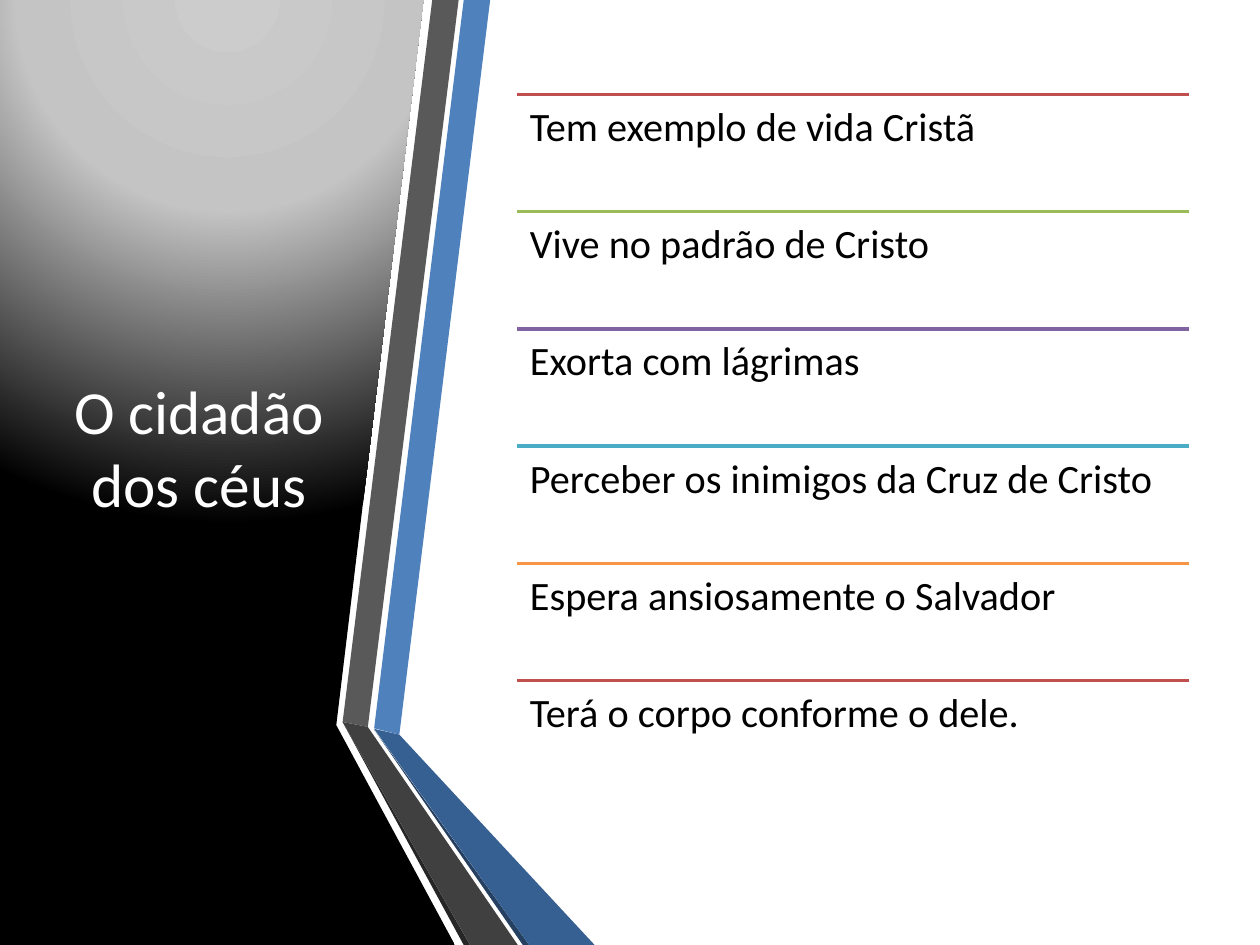
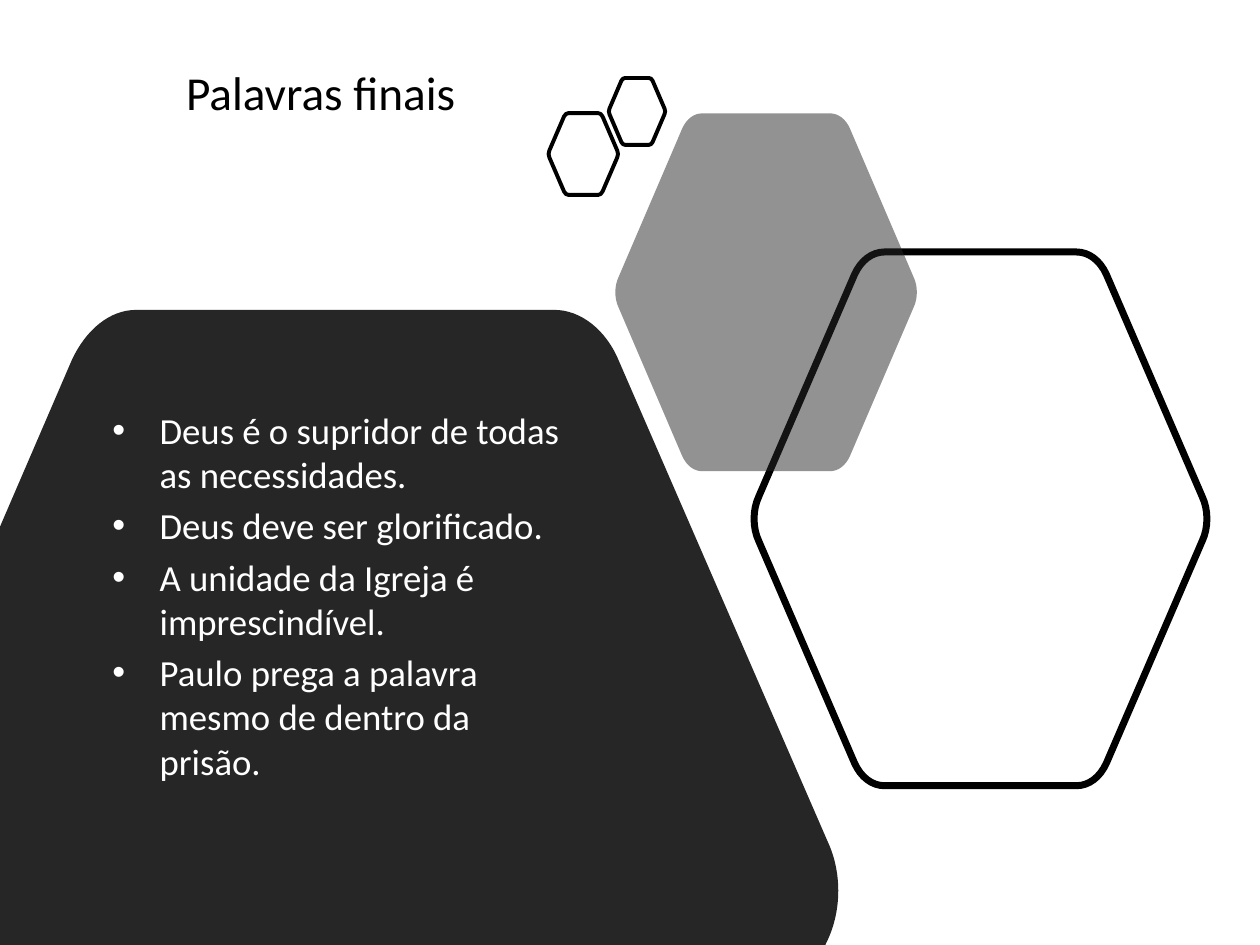
"""Builds two slides about the citizen of heaven and the closing words."""
from lxml.etree import SubElement
from pptx import Presentation
from pptx.dml.color import RGBColor
from pptx.enum.shapes import MSO_CONNECTOR
from pptx.enum.text import MSO_ANCHOR, MSO_AUTO_SIZE, PP_ALIGN
from pptx.oxml import parse_xml
from pptx.oxml.ns import nsdecls, qn
from pptx.util import Pt

FONT = "Calibri"
WIDTH, HEIGHT = 720, 540
COLORS = {
    "black": "000000", "white": "FFFFFF", "charcoal": "262626",
    "light": "CCCCCC", "silver": "C4C4C4",
    "gray": "595959", "gray_fold": "404040",
    "blue": "4F81BD", "blue_fold": "376092", "blue_edge": "254061",
    "red": "C0504D", "green": "9BBB59", "purple": "8064A2",
    "aqua": "4BACC6", "orange": "F79646",
}
RIBBONS = [
    ("blue", [(213.8, 416.2), (228.2, 419.8), (280.1, 0), (265, 0)]),
    ("gray", [(262.1, 0), (247, 0), (195.8, 412.6), (210.2, 415.4)]),
    ("charcoal", [(195.8, 412.6), (265, HEIGHT), (268.6, HEIGHT)]),
    ("blue_edge", [(213.8, 416.9), (298.8, HEIGHT), (302.4, HEIGHT)]),
    ("blue_fold", [(213.8, 416.5), (302.4, HEIGHT), (339.8, HEIGHT), (228.2, 419.8)]),
    ("gray_fold", [(295.9, HEIGHT), (210.2, 415.4), (195.8, 412.6), (268.6, HEIGHT)]),
]
TRAITS = [
    ("red", "Tem exemplo de vida Cristã"),
    ("green", "Vive no padrão de Cristo"),
    ("purple", "Exorta com lágrimas"),
    ("aqua", "Perceber os inimigos da Cruz de Cristo"),
    ("orange", "Espera ansiosamente o Salvador"),
    ("red", "Terá o corpo conforme o dele."),
]
CLOSING_WORDS = [
    "Deus é o supridor de todas as necessidades.",
    "Deus deve ser glorificado.",
    "A unidade da Igreja é imprescindível.",
    "Paulo prega a palavra mesmo de dentro da prisão.",
]
CLOSING_PANEL = [
    [(77.8, 177.1)],
    [(316.8, 177.1)],
    [(331.9, 177.1), (346.3, 188.6), (353.5, 205.9)],
    [(473, 481)],
    [(481, 498.2), (481, 519.8), (473, 537.1)],
    [(471.6, HEIGHT)],
    [(0, HEIGHT)],
    [(0, 301)],
    [(41, 205.9)],
    [(49, 188.6), (62.6, 177.1), (77.8, 177.1)],
]
HALF_HEXAGON = [
    [(0.224, 0.042)],
    [(0.238, 0.016), (0.262, 0), (0.29, 0)],
    [(0.71, 0)],
    [(0.738, 0), (0.762, 0.016), (0.776, 0.042)],
    [(0.986, 0.458)],
    [(1, 0.483), (1, 0.517), (0.986, 0.542)],
]


def rgb(color):
    return RGBColor.from_string(COLORS[color])


def write(holder, lines, size, color="black", align=PP_ALIGN.LEFT,
          anchor=MSO_ANCHOR.TOP, spacing=1.0, gap=0, inset=3.6, bullet_indent=0):
    frame = holder.text_frame
    frame.word_wrap = True
    frame.auto_size = MSO_AUTO_SIZE.NONE
    frame.vertical_anchor = anchor
    frame.margin_left = frame.margin_right = Pt(7.2)
    frame.margin_top = frame.margin_bottom = Pt(inset)
    for index, line in enumerate(lines):
        paragraph = frame.add_paragraph() if index else frame.paragraphs[0]
        if bullet_indent:
            properties = paragraph._p.get_or_add_pPr()
            properties.set("marL", str(Pt(bullet_indent)))
            properties.set("indent", str(-Pt(bullet_indent)))
            SubElement(properties, qn("a:buChar")).set("char", "•")
        paragraph.alignment = align
        paragraph.line_spacing = spacing
        paragraph.space_before = Pt(gap if index else 0)
        run = paragraph.add_run()
        run.text = line
        run.font.name = FONT
        run.font.size = Pt(size)
        run.font.color.rgb = rgb(color)


def place(placeholder, left, top, width, height):
    placeholder.left, placeholder.top = Pt(left), Pt(top)
    placeholder.width, placeholder.height = Pt(width), Pt(height)
    placeholder.element.getparent().append(placeholder.element)
    return placeholder


def bend(outline, steps):
    lines = iter(list(outline.element.spPr.iter(qn("a:lnTo"))))
    for step in steps[1:]:
        first, *others = [next(lines) for _ in step]
        if others:
            first.tag = qn("a:cubicBezTo")
            for other in others:
                first.append(other[0])
                other.getparent().remove(other)


def draw_outline(slide, steps, fill=None, line=None, weight=1.0, opacity=100):
    start, *rest = [(Pt(x), Pt(y)) for step in steps for x, y in step]
    builder = slide.shapes.build_freeform(*start)
    builder.add_line_segments(rest, close=True)
    outline = builder.convert_to_shape()
    bend(outline, steps)
    outline.shadow.inherit = False
    if fill:
        outline.fill.solid()
        outline.fill.fore_color.rgb = rgb(fill)
        if opacity < 100:
            tint = outline.element.spPr.find(".//" + qn("a:srgbClr"))
            SubElement(tint, qn("a:alpha")).set("val", str(opacity * 1000))
    else:
        outline.fill.background()
    if line:
        outline.line.color.rgb = rgb(line)
        outline.line.width = Pt(weight)
    else:
        outline.line.fill.background()
    return outline


def draw_polygon(slide, points, fill):
    return draw_outline(slide, [[point] for point in points], fill)


def draw_hexagon(slide, left, top, width, height, **style):
    opposite = [[(1 - x, 1 - y) for x, y in step] for step in HALF_HEXAGON]
    steps = [[(left + x * width, top + y * height) for x, y in step]
             for step in HALF_HEXAGON + opposite]
    draw_outline(slide, steps, **style)


def apply_glow(outline, stops):
    stop_xml = "".join(
        f'<a:gs pos="{position * 1000}"><a:srgbClr val="{COLORS[color]}"/></a:gs>'
        for position, color in stops)
    gradient = parse_xml(
        f'<a:gradFill {nsdecls("a")} rotWithShape="1"><a:gsLst>{stop_xml}</a:gsLst>'
        '<a:path path="circle"><a:fillToRect l="50000" t="-80000" r="50000" b="180000"/>'
        '</a:path></a:gradFill>')
    properties = outline.element.spPr
    properties.replace(properties.find(qn("a:solidFill")), gradient)


def draw_rule(slide, left, top, width, color):
    rule = slide.shapes.add_connector(
        MSO_CONNECTOR.STRAIGHT, Pt(left), Pt(top), Pt(left + width), Pt(top))
    rule.line.color.rgb = rgb(color)
    rule.line.width = Pt(2)
    SubElement(rule.element.spPr, qn("a:effectLst"))


def build_citizen(deck):
    slide = deck.slides.add_slide(deck.slide_layouts[5])
    panel = draw_polygon(
        slide, [(0, 0), (242, 0), (192.2, 414.4), (260, HEIGHT), (0, HEIGHT)], "black")
    apply_glow(panel, [(0, "light"), (40, "silver"), (100, "black")])
    for color, points in RIBBONS:
        draw_polygon(slide, points, color)
    title = place(slide.shapes.title, 31.6, 54.3, 164.2, 401.8)
    write(title, ["O cidadão dos céus"], 35, color="white",
          align=PP_ALIGN.CENTER, anchor=MSO_ANCHOR.MIDDLE)
    left, width, pitch = 295.7, 383.5, 66.98
    for row, (color, trait) in enumerate(TRAITS):
        top = 54 + row * pitch
        draw_rule(slide, left, top, width, color)
        label = slide.shapes.add_textbox(Pt(left), Pt(top), Pt(width), Pt(pitch))
        write(label, [trait], 23, spacing=0.9, inset=7)


def build_closing(deck):
    slide = deck.slides.add_slide(deck.slide_layouts[1])
    draw_outline(slide, CLOSING_PANEL, "charcoal")
    draw_hexagon(slide, 430, 144, 260.6, 305, line="black", weight=4)
    draw_hexagon(slide, 351, 64.8, 173.5, 204.5, fill="charcoal", opacity=50)
    for cell in [(313.4, 64.6, 39.9, 46.8), (347.8, 44.6, 32.4, 38.2)]:
        draw_hexagon(slide, *cell, line="black", weight=2.25)
    title = place(slide.shapes.title, 56.9, 36.4, 252.7, 129.6)
    write(title, ["Palavras finais"], 27, align=PP_ALIGN.CENTER, spacing=0.9)
    body = place(slide.placeholders[1], 57, 229.3, 280, 243.4)
    write(body, CLOSING_WORDS, 21, color="white", gap=4.2, bullet_indent=27)


def main():
    deck = Presentation()
    deck.slide_width, deck.slide_height = Pt(WIDTH), Pt(HEIGHT)
    build_citizen(deck)
    build_closing(deck)
    deck.save("out.pptx")


if __name__ == "__main__":
    main()
